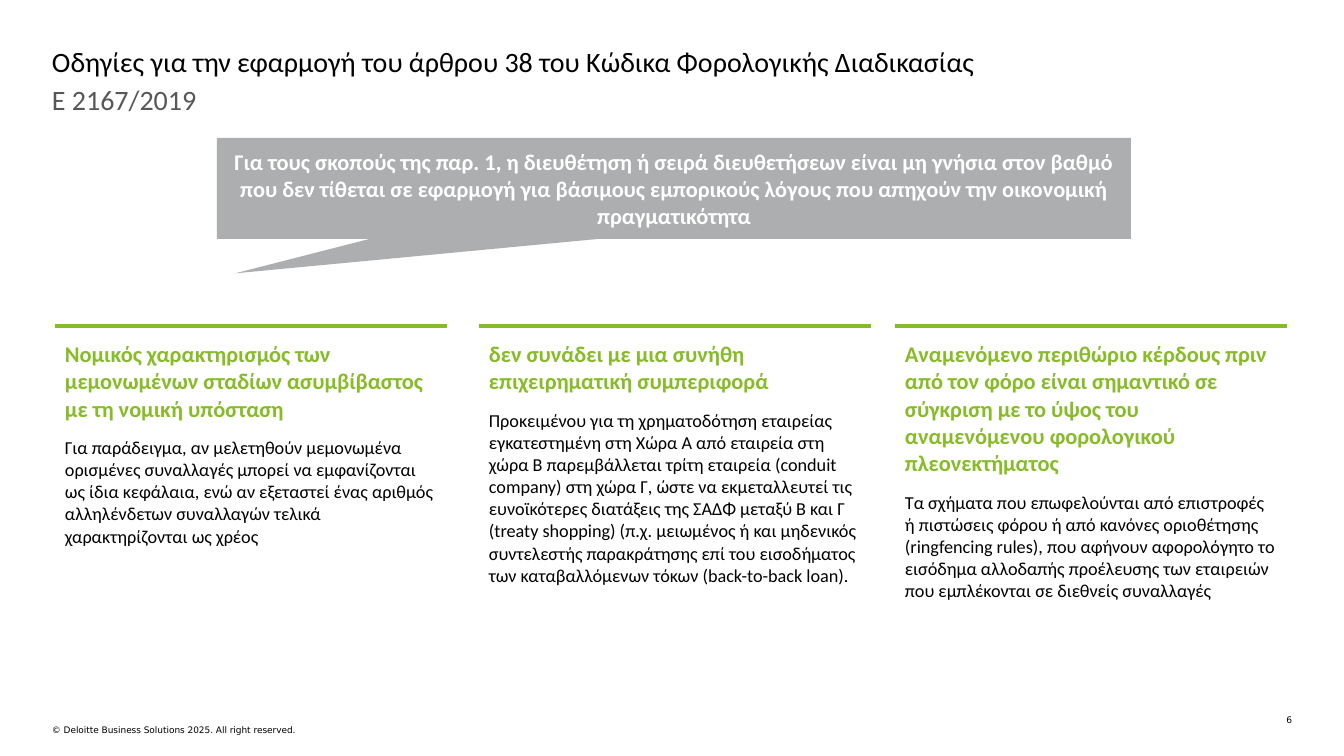
import pptx
import pptx.util
import pptx.dml.color
import pptx.enum.shapes
import pptx.enum.text
import pptx.oxml
import pptx.oxml.ns

EMU_PER_PX = 914400 / 100.8
COLORS = {
    "black": "000000",
    "subtitle": "575757",
    "green": "86BC25",
    "callout": "ACAEB0",
    "white": "FFFFFF",
}
ALIGN = pptx.enum.text.PP_ALIGN
ANCHOR = pptx.enum.text.MSO_ANCHOR

COLUMNS = [
    (55, 224,
     "Νομικός χαρακτηρισμός των μεμονωμένων σταδίων ασυμβίβαστος με τη νομική υπόσταση",
     "Για παράδειγμα, αν μελετηθούν μεμονωμένα ορισμένες συναλλαγές μπορεί να "
     "εμφανίζονται ως ίδια κεφάλαια, ενώ αν εξεταστεί ένας αριθμός αλληλένδετων "
     "συναλλαγών τελικά χαρακτηρίζονται ως χρέος"),
    (479, 263,
     "δεν συνάδει με μια συνήθη επιχειρηματική συμπεριφορά",
     "Προκειμένου για τη χρηματοδότηση εταιρείας εγκατεστημένη στη Χώρα Α από εταιρεία "
     "στη χώρα Β παρεμβάλλεται τρίτη εταιρεία (conduit company) στη χώρα Γ, ώστε να "
     "εκμεταλλευτεί τις ευνοϊκότερες διατάξεις της ΣΑΔΦ μεταξύ Β και Γ (treaty shopping) "
     "(π.χ. μειωμένος ή και μηδενικός συντελεστής παρακράτησης επί του εισοδήματος των "
     "καταβαλλόμενων τόκων (back-to-back loan)."),
    (895, 278,
     "Αναμενόμενο περιθώριο κέρδους πριν από τον φόρο είναι σημαντικό σε σύγκριση με το "
     "ύψος του αναμενόμενου φορολογικού πλεονεκτήματος",
     "Τα σχήματα που επωφελούνται από επιστροφές ή πιστώσεις φόρου ή από κανόνες "
     "οριοθέτησης (ringfencing rules), που αφήνουν αφορολόγητο το εισόδημα αλλοδαπής "
     "προέλευσης των εταιρειών που εμπλέκονται σε διεθνείς συναλλαγές"),
]


def px(length):
    return pptx.util.Emu(round(length * EMU_PER_PX))


def rgb(name):
    return pptx.dml.color.RGBColor.from_string(COLORS[name])


def set_margins(frame, left=0, top=0, right=0, bottom=0):
    """Set the insets of a text frame or a table cell."""
    frame.margin_left, frame.margin_top = px(left), px(top)
    frame.margin_right, frame.margin_bottom = px(right), px(bottom)


def write(paragraph, text, size, color="black", font="Calibri", bold=False,
          align=ALIGN.LEFT, space_after=0):
    paragraph.alignment = align
    paragraph.space_before = pptx.util.Pt(0)
    paragraph.space_after = pptx.util.Pt(space_after)
    run = paragraph.add_run()
    run.text = text
    run.font.size = pptx.util.Pt(size)
    run.font.name = font
    run.font.bold = bold
    run.font.color.rgb = rgb(color)


def add_label(slide, box, text, size, **text_format):
    frame = slide.shapes.add_textbox(*map(px, box)).text_frame
    frame.word_wrap = True
    set_margins(frame)
    write(frame.paragraphs[0], text, size, **text_format)


def add_heading(slide, left, top, width):
    title = slide.shapes.title
    title.left, title.top, title.width, title.height = map(px, (left, top, width, 34))
    frame = title.text_frame
    frame.word_wrap = True
    frame.auto_size = pptx.enum.text.MSO_AUTO_SIZE.NONE
    frame.vertical_anchor = ANCHOR.TOP
    set_margins(frame)
    paragraph = frame.paragraphs[0]
    paragraph.line_spacing = 1.0
    write(paragraph,
          "Οδηγίες για την εφαρμογή του άρθρου 38 του Κώδικα Φορολογικής Διαδικασίας", 20)
    add_label(slide, (left, top + 38, width, 34), "Ε 2167/2019", 20, color="subtitle")


def add_callout(slide, left, top, width, height):
    callout = slide.shapes.add_shape(
        pptx.enum.shapes.MSO_SHAPE.RECTANGULAR_CALLOUT,
        *map(px, (left, top, width, height)))
    callout.adjustments[0], callout.adjustments[1] = -0.48, 0.84
    callout.shadow.inherit = False
    callout.fill.solid()
    callout.fill.fore_color.rgb = rgb("callout")
    callout.line.fill.background()
    frame = callout.text_frame
    frame.word_wrap = True
    frame.vertical_anchor = ANCHOR.MIDDLE
    set_margins(frame, 10, 10, 10, 10)
    write(frame.paragraphs[0],
          "Για τους σκοπούς της παρ. 1, η διευθέτηση ή σειρά διευθετήσεων είναι μη γνήσια "
          "στον βαθμό που δεν τίθεται σε εφαρμογή για βάσιμους εμπορικούς λόγους που "
          "απηχούν την οικονομική πραγματικότητα",
          16, color="white", bold=True, align=ALIGN.CENTER)


def set_top_border(cell, color, points):
    """Draw only the top border; it must precede the fill in the cell properties."""
    properties = cell._tc.get_or_add_tcPr()
    namespace = pptx.oxml.ns.nsdecls("a")
    for index, side in enumerate(("lnL", "lnR", "lnT", "lnB")):
        fill = "<a:noFill/>"
        if side == "lnT":
            fill = f'<a:solidFill><a:srgbClr val="{COLORS[color]}"/></a:solidFill>'
        border = pptx.oxml.parse_xml(
            f'<a:{side} {namespace} w="{pptx.util.Pt(points)}">{fill}</a:{side}>')
        properties.insert(index, border)


def add_column(slide, left, top, width, height, heading, body):
    table = slide.shapes.add_table(1, 1, *map(px, (left, top, width, height))).table
    table.first_row = table.horz_banding = False
    cell = table.cell(0, 0)
    cell.fill.background()
    cell.vertical_anchor = ANCHOR.TOP
    set_margins(cell, 10, 15, 10, 5)
    set_top_border(cell, "green", 3)
    frame = cell.text_frame
    write(frame.paragraphs[0], heading, 16, color="green", bold=True, space_after=10)
    write(frame.add_paragraph(), body, 13, space_after=10)


def add_footer(slide, left, right, top):
    add_label(slide, (left, top + 11, 591, 22),
              "© Deloitte Business Solutions 2025. All right reserved.",
              6.4, font="DejaVu Sans")
    add_label(slide, (right - 34, top, 34, 11), "6", 6.5,
              font="DejaVu Sans", align=ALIGN.RIGHT)


def main():
    presentation = pptx.Presentation()
    presentation.slide_width, presentation.slide_height = px(1344), px(756)
    slide = presentation.slides.add_slide(presentation.slide_layouts[5])
    add_heading(slide, 52, 44, 1240)
    for left, height, heading, body in COLUMNS:
        add_column(slide, left, 326, 392, height, heading, body)
    add_callout(slide, 217, 138, 914, 101)
    add_footer(slide, 52, 1292, 714)
    presentation.save("out.pptx")


if __name__ == "__main__":
    main()
